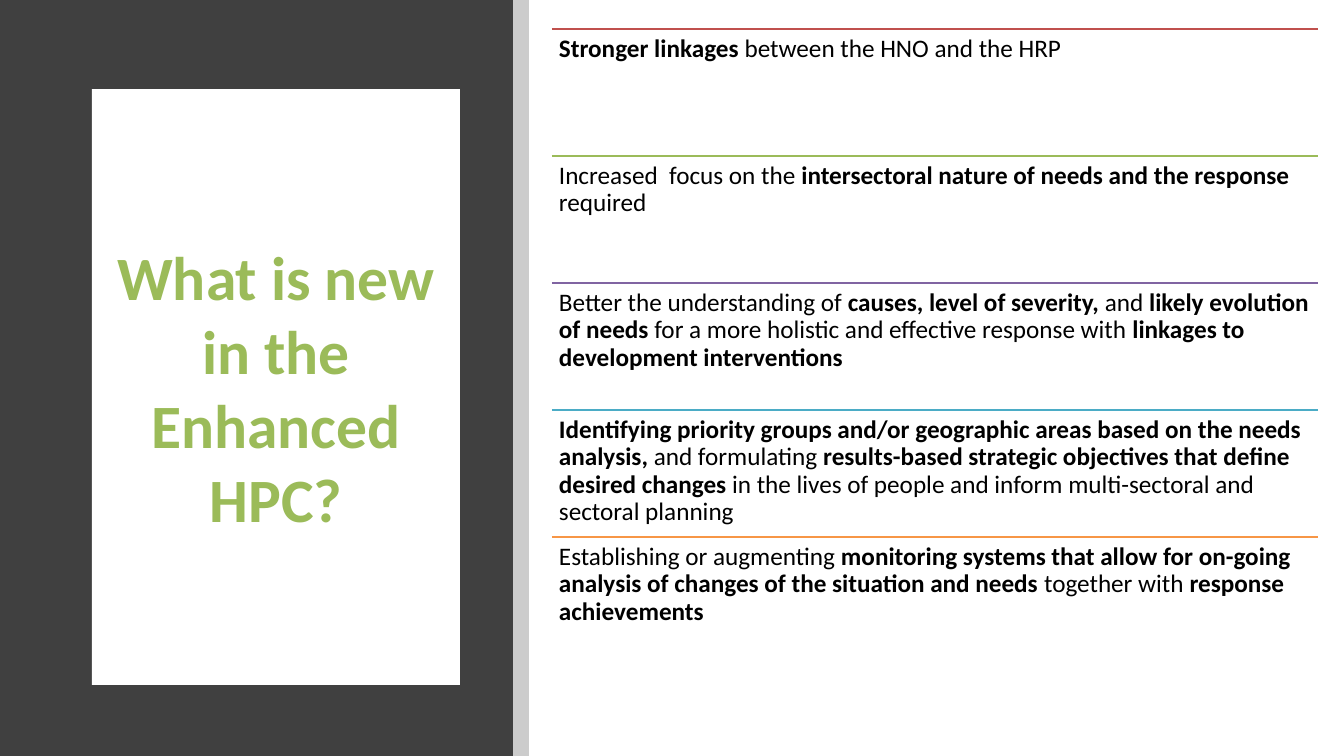
"""Build the slide on what is new in the Enhanced HPC."""
import pptx
import pptx.dml.color
import pptx.enum.shapes
import pptx.enum.text
import pptx.oxml.ns
import pptx.oxml.xmlchemy
import pptx.util
from pptx.dml.color import RGBColor

BLACK = RGBColor(0x00, 0x00, 0x00)
WHITE = RGBColor(0xFF, 0xFF, 0xFF)
CHARCOAL = RGBColor(0x40, 0x40, 0x40)
RED = RGBColor(0xC0, 0x50, 0x4D)
GREEN = RGBColor(0x9B, 0xBB, 0x59)
PURPLE = RGBColor(0x80, 0x64, 0xA2)
TEAL = RGBColor(0x4B, 0xAC, 0xC6)
ORANGE = RGBColor(0xF7, 0x96, 0x46)

FONT = "Calibri"
TITLE = "What is new in the Enhanced HPC?"
CHANGES = [
    (RED, [("Stronger linkages ", True), ("between the HNO and the HRP", False)]),
    (GREEN, [
        ("Increased  focus on the ", False),
        ("intersectoral nature of needs and the response ", True),
        ("required", False),
    ]),
    (PURPLE, [
        ("Better the understanding of ", False),
        ("causes, level of severity, ", True),
        ("and ", False),
        ("likely evolution of needs ", True),
        ("for a more holistic and effective response with ", False),
        ("linkages to development interventions", True),
    ]),
    (TEAL, [
        ("Identifying priority groups and/or geographic areas based on the needs analysis, ", True),
        ("and formulating", False),
        (" results-based strategic objectives that define desired changes", True),
        (" in the lives of people and inform multi-sectoral and sectoral planning", False),
    ]),
    (ORANGE, [
        ("Establishing or augmenting ", False),
        ("monitoring systems that allow for on-going analysis of changes of the situation and needs ", True),
        ("together with ", False),
        ("response achievements", True),
    ]),
]

PAGE_WIDTH, PAGE_HEIGHT = 1344, 756
PANEL_WIDTH, STRIP_WIDTH = 513, 16
TITLE_AREA = (92, 89, 368, 596)
LIST_LEFT, LIST_TOP, LIST_WIDTH, ROW_HEIGHT = 552, 29, 766, 127
INSET = 7


def px(length):
    """Convert px to EMU."""
    return pptx.util.Emu(round(length * 914400 / 100.8))


def style(font, size, color, bold):
    """Set the look of a font."""
    font.name, font.size, font.bold = FONT, pptx.util.Pt(size), bold
    font.color.rgb = color


def add_band(page, left, width, color):
    """Add a full-height rectangle."""
    band = page.shapes.add_shape(
        pptx.enum.shapes.MSO_SHAPE.RECTANGLE, px(left), 0, px(width), px(PAGE_HEIGHT))
    band.shadow.inherit = False
    band.fill.solid()
    band.fill.fore_color.rgb = color
    band.line.fill.background()
    return band


def add_title(page):
    """Place the title card in front of the panel."""
    title = page.shapes.title
    page.shapes._spTree.append(title._element)
    title.left, title.top, title.width, title.height = map(px, TITLE_AREA)
    title.fill.solid()
    title.fill.fore_color.rgb = WHITE
    title.text_frame.text = TITLE
    title.text_frame.vertical_anchor = pptx.enum.text.MSO_ANCHOR.MIDDLE
    para = title.text_frame.paragraphs[0]
    para.alignment = pptx.enum.text.PP_ALIGN.CENTER
    style(para.runs[0].font, 44, GREEN, True)


def add_change(page, top, color, spans):
    """Add one rule with its statement below."""
    rule = page.shapes.add_connector(
        pptx.enum.shapes.MSO_CONNECTOR.STRAIGHT,
        px(LIST_LEFT), px(top), px(LIST_LEFT + LIST_WIDTH), px(top))
    rule.line.color.rgb = color
    rule.line.width = pptx.util.Pt(2)
    rule._element.spPr.append(pptx.oxml.xmlchemy.OxmlElement("a:effectLst"))

    box = page.shapes.add_textbox(px(LIST_LEFT), px(top), px(LIST_WIDTH), px(ROW_HEIGHT))
    frame = box.text_frame
    frame.word_wrap = True
    frame.margin_left = frame.margin_right = px(INSET)
    frame.margin_top = frame.margin_bottom = px(INSET)
    para = frame.paragraphs[0]
    para.line_spacing = 0.9
    for words, bold in spans:
        span = para.add_run()
        span.text = words
        style(span.font, 18, BLACK, bold)


def main():
    """Build and save the deck."""
    deck = pptx.Presentation()
    deck.slide_width, deck.slide_height = px(PAGE_WIDTH), px(PAGE_HEIGHT)
    page = deck.slides.add_slide(deck.slide_layouts[5])
    add_band(page, 0, PANEL_WIDTH, CHARCOAL)
    add_title(page)
    strip = add_band(page, PANEL_WIDTH, STRIP_WIDTH, BLACK)
    alpha = pptx.oxml.xmlchemy.OxmlElement("a:alpha")
    alpha.set("val", "20000")
    strip._element.spPr.find(".//" + pptx.oxml.ns.qn("a:srgbClr")).append(alpha)
    for index, (color, spans) in enumerate(CHANGES):
        add_change(page, LIST_TOP + index * ROW_HEIGHT, color, spans)
    deck.save("out.pptx")


if __name__ == "__main__":
    main()
